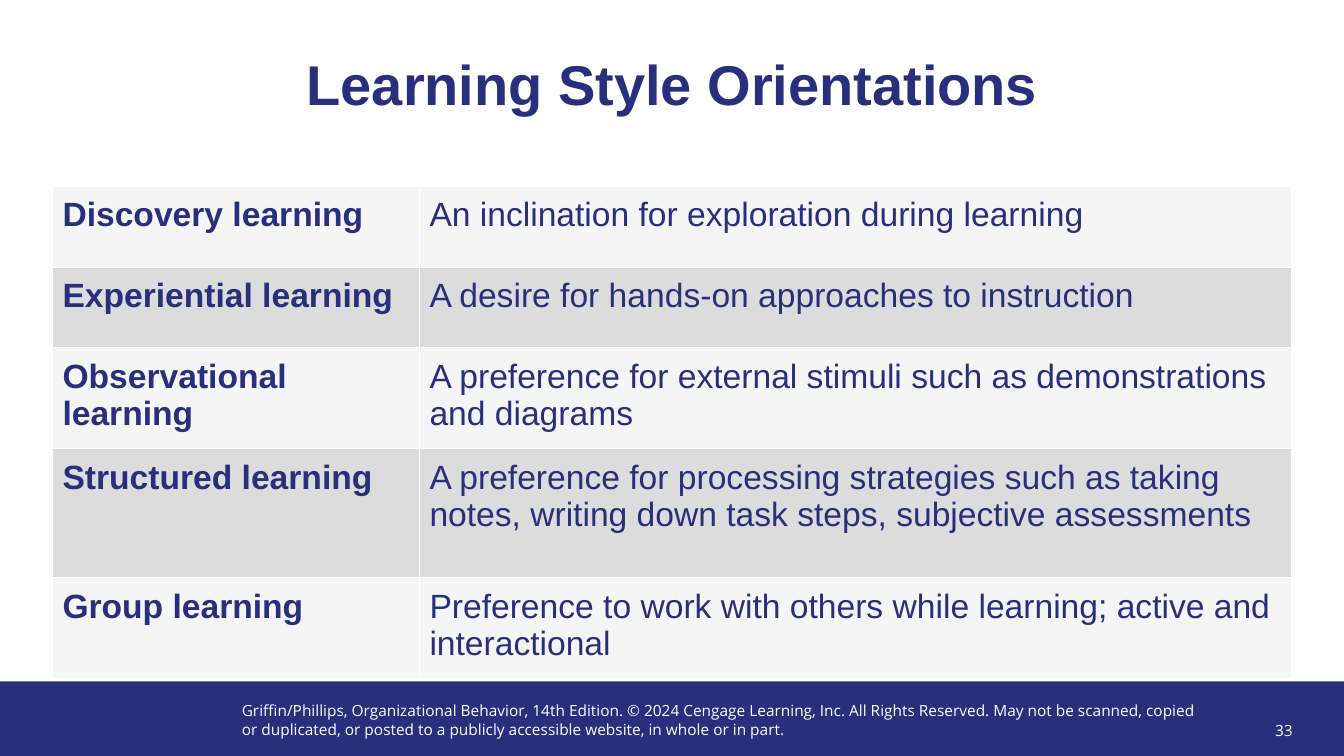
from pptx import Presentation
from pptx.dml.color import RGBColor
from pptx.enum.shapes import MSO_SHAPE
from pptx.enum.text import MSO_ANCHOR, MSO_AUTO_SIZE, PP_ALIGN
from pptx.util import Inches, Pt

COLORS = {"navy": "282F7C", "light": "F5F5F5", "grey": "DCDCDC", "white": "FFFFFF"}
ORIENTATIONS = [
    ("Discovery learning", "An inclination for exploration during learning", 0.8),
    ("Experiential learning", "A desire for hands-on approaches to instruction", 0.8),
    ("Observational learning",
     "A preference for external stimuli such as demonstrations and diagrams", 0.8),
    ("Structured learning",
     "A preference for processing strategies such as taking notes, "
     "writing down task steps, subjective assessments", 1.28),
    ("Group learning",
     "Preference to work with others while learning; active and interactional", 0.99),
]
COPYRIGHT = (
    "Griffin/Phillips, Organizational Behavior, 14th Edition. © 2024 Cengage Learning, Inc. "
    "All Rights Reserved. May not be scanned, copied or duplicated, "
    "or posted to a publicly accessible website, in whole or in part."
)


def rgb(color):
    return RGBColor.from_string(COLORS[color])


def write(frame, text, size, color, font="Arial", bold=False, align=PP_ALIGN.LEFT):
    frame.word_wrap = True
    paragraph = frame.paragraphs[0]
    paragraph.text = text
    paragraph.alignment = align
    paragraph.font.name = font
    paragraph.font.size = Pt(size)
    paragraph.font.bold = bold
    paragraph.font.color.rgb = rgb(color)
    return paragraph


def add_title(slide, text):
    title = slide.shapes.title
    title.left, title.top = Inches(0.52), Inches(0.52)
    title.width, title.height = Inches(12.29), Inches(1.33)
    title.text_frame.vertical_anchor = MSO_ANCHOR.TOP
    heading = write(title.text_frame, text, 40, "navy", bold=True, align=PP_ALIGN.CENTER)
    heading.line_spacing = 0.9


def add_footer_band(slide):
    band = slide.shapes.add_shape(
        MSO_SHAPE.RECTANGLE, 0, Inches(6.76), Inches(13.33), Inches(0.74))
    band.shadow.inherit = False
    band.fill.solid()
    band.fill.fore_color.rgb = rgb("navy")
    band.line.fill.background()


def add_footer_text(slide, text, left, top, width, height, align=PP_ALIGN.LEFT):
    footer = slide.shapes.add_textbox(
        Inches(left), Inches(top), Inches(width), Inches(height))
    write(footer.text_frame, text, 11, "white", font="Open Sans", align=align)
    return footer.text_frame


def add_orientation_table(slide):
    table = slide.shapes.add_table(
        len(ORIENTATIONS), 2, Inches(0.52), Inches(1.85), Inches(12.29), Inches(4.67)).table
    table.first_row = False
    table.horz_banding = False
    for column, width in zip(table.columns, (3.64, 8.65)):
        column.width = Inches(width)
    for index, (style, description, height) in enumerate(ORIENTATIONS):
        table.rows[index].height = Inches(height)
        for column, text in enumerate((style, description)):
            cell = table.cell(index, column)
            cell.margin_left = cell.margin_right = Inches(0.1)
            cell.margin_top = cell.margin_bottom = Inches(0.1)
            cell.fill.solid()
            cell.fill.fore_color.rgb = rgb("grey" if index % 2 else "light")
            write(cell.text_frame, text, 24, "navy", bold=column == 0)


def main():
    presentation = Presentation()
    presentation.slide_width = Inches(13.33)
    presentation.slide_height = Inches(7.5)
    slide = presentation.slides.add_slide(presentation.slide_layouts[5])
    add_footer_band(slide)
    copyright_line = add_footer_text(slide, COPYRIGHT, 2.3, 6.91, 9.8, 0.47)
    copyright_line.auto_size = MSO_AUTO_SIZE.SHAPE_TO_FIT_TEXT
    page_number = add_footer_text(slide, "33", 12.12, 7.05, 0.8, 0.4, PP_ALIGN.RIGHT)
    page_number.vertical_anchor = MSO_ANCHOR.MIDDLE
    add_title(slide, "Learning Style Orientations")
    add_orientation_table(slide)
    presentation.save("out.pptx")


if __name__ == "__main__":
    main()
